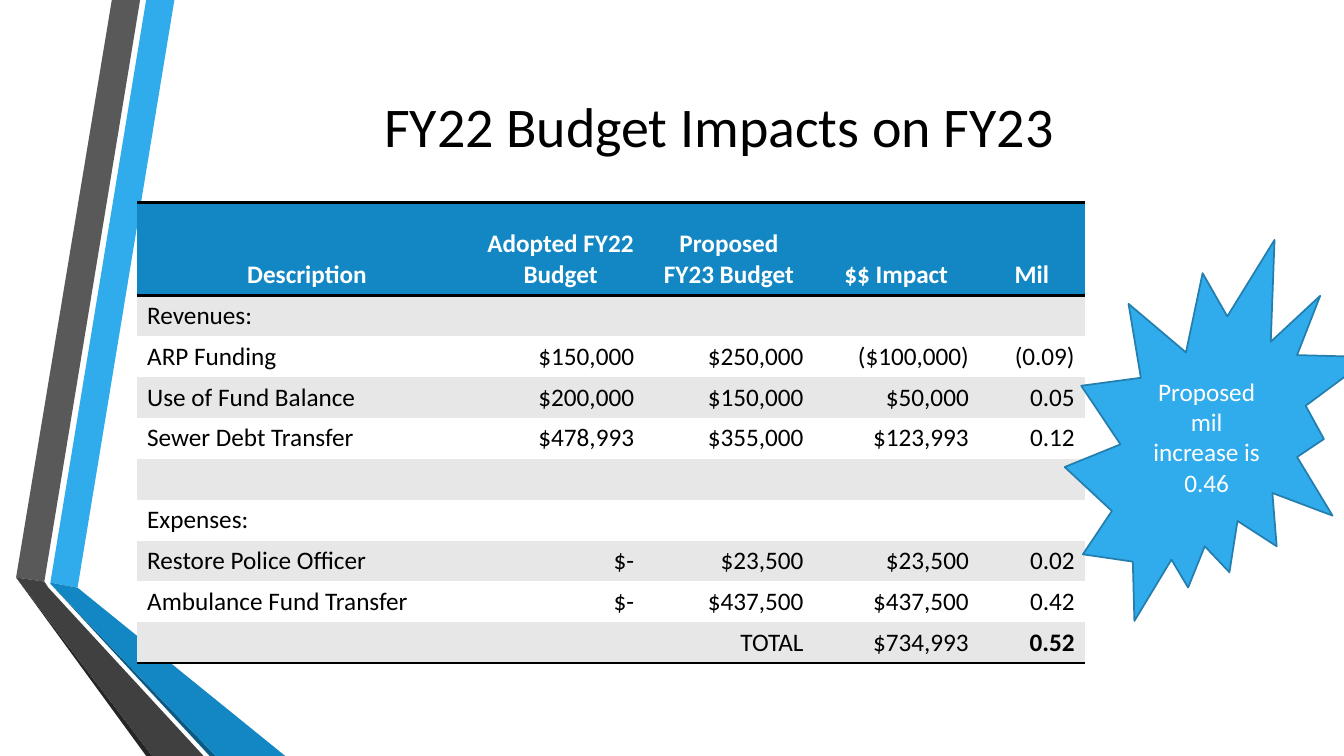
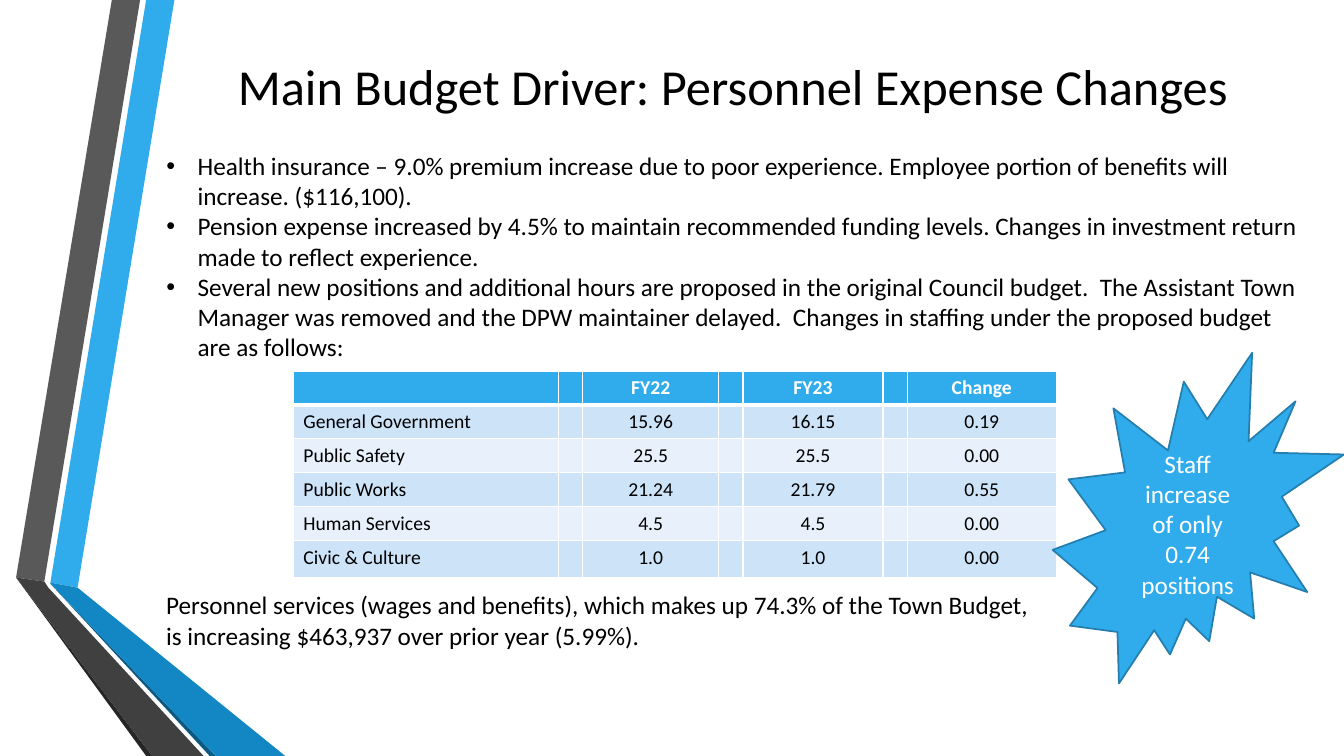
from lxml import etree
from pptx import Presentation
from pptx.dml.color import RGBColor
from pptx.enum.shapes import MSO_SHAPE
from pptx.enum.text import MSO_ANCHOR, MSO_AUTO_SIZE, PP_ALIGN
from pptx.oxml.ns import qn
from pptx.util import Inches, Pt

SEAL = MSO_SHAPE.EXPLOSION2
TOP, MIDDLE, BOTTOM = MSO_ANCHOR.TOP, MSO_ANCHOR.MIDDLE, MSO_ANCHOR.BOTTOM
LEFT, CENTER, RIGHT = PP_ALIGN.LEFT, PP_ALIGN.CENTER, PP_ALIGN.RIGHT
NO_FIT = MSO_AUTO_SIZE.NONE

# Shared look
FONT = "Calibri"
BLACK = RGBColor(0x00, 0x00, 0x00)
WHITE = RGBColor(0xFF, 0xFF, 0xFF)
SKY = RGBColor(0x30, 0xAC, 0xEC)
BLUE = RGBColor(0x12, 0x87, 0xC3)
NAVY = RGBColor(0x0C, 0x5A, 0x82)
SEAL_EDGE = RGBColor(0x24, 0x7F, 0xAF)
GRAY = RGBColor(0x59, 0x59, 0x59)
CHARCOAL = RGBColor(0x40, 0x40, 0x40)
INK = RGBColor(0x26, 0x26, 0x26)
STRIPE = RGBColor(0xE7, 0xE7, 0xE7)
PALE = RGBColor(0xCD, 0xE3, 0xF8)
PALEST = RGBColor(0xE8, 0xF1, 0xFB)
NO_STYLE = "{2D5ABB26-0587-4C30-8999-92F81FD0307C}"
SIDES = ("L", "R", "T", "B")

RIBBONS = [
    (SKY, [(0.5, 5.78), (0.77, 5.83), (1.73, 0), (1.45, 0)]),
    (GRAY, [(1.39, 0), (1.11, 0), (0.16, 5.73), (0.44, 5.77)]),
    (INK, [(0.16, 5.73), (1.45, 7.5), (1.51, 7.5)]),
    (NAVY, [(0.5, 5.79), (2.08, 7.5), (2.14, 7.5)]),
    (BLUE, [(0.5, 5.79), (2.14, 7.5), (2.83, 7.5), (0.77, 5.83), (0.5, 5.78)]),
    (CHARCOAL, [(2.02, 7.5), (0.48, 5.83), (0.44, 5.77), (0.16, 5.73), (1.51, 7.5)]),
]

# Content
IMPACT_TITLE = "FY22 Budget Impacts on FY23"
IMPACT_ROWS = [
    ("Description", "Adopted FY22 Budget", "Proposed FY23 Budget", "$$ Impact", "Mil"),
    ("Revenues:", "", "", "", ""),
    ("ARP Funding", "$150,000", "$250,000", "($100,000)", "(0.09)"),
    ("Use of Fund Balance", "$200,000", "$150,000", "$50,000", "0.05"),
    ("Sewer Debt Transfer", "$478,993", "$355,000", "$123,993", "0.12"),
    ("", "", "", "", ""),
    ("Expenses:", "", "", "", ""),
    ("Restore Police Officer", "$-", "$23,500", "$23,500", "0.02"),
    ("Ambulance Fund Transfer", "$-", "$437,500", "$437,500", "0.42"),
    ("", "", "TOTAL", "$734,993", "0.52"),
]
IMPACT_SEAL = "Proposed mil increase is 0.46"

STAFF_TITLE = "Main Budget Driver: Personnel Expense Changes"
STAFF_POINTS = [
    "Health insurance – 9.0% premium increase due to poor experience. "
    "Employee portion of benefits will increase. ($116,100).",
    "Pension expense increased by 4.5% to maintain recommended funding levels. "
    "Changes in investment return made to reflect experience.",
    "Several new positions and additional hours are proposed in the original Council "
    "budget.  The Assistant Town Manager was removed and the DPW maintainer delayed.  "
    "Changes in staffing under the proposed budget are as follows:",
]
STAFF_COUNTS = [
    ("", "FY22", "FY23", "Change"),
    ("General Government", "15.96", "16.15", "0.19"),
    ("Public Safety", "25.5", "25.5", "0.00"),
    ("Public Works", "21.24", "21.79", "0.55"),
    ("Human Services", "4.5", "4.5", "0.00"),
    ("Civic & Culture", "1.0", "1.0", "0.00"),
]
STAFF_NOTE = [
    "Personnel services (wages and benefits), which makes up 74.3% of the Town Budget,",
    "is increasing $463,937 over prior year (5.99%).",
]
STAFF_SEAL = "Staff increase of only 0.74 positions"


def write(frame, lines, size=18, color=BLACK, bold=False, align=LEFT, anchor=TOP,
          bullet=False):
    """Fill a text frame, one paragraph for each line."""
    frame.word_wrap = True
    frame.vertical_anchor = anchor
    for index, line in enumerate(lines):
        para = frame.paragraphs[0] if index == 0 else frame.add_paragraph()
        para.alignment = align
        para.space_before = Pt(0)
        if bullet:
            props = para._p.get_or_add_pPr()
            props.set("marL", str(Inches(0.31)))
            props.set("indent", str(-Inches(0.31)))
            etree.SubElement(props, qn("a:buChar")).set("char", "•")
        if not line:  # an empty cell still sets the row height
            etree.SubElement(para._p, qn("a:endParaRPr")).set("sz", str(size * 100))
            continue
        span = para.add_run()
        span.text = line
        span.font.name, span.font.size = FONT, Pt(size)
        span.font.bold, span.font.color.rgb = bold, color


def place(shape, left, top, width, height):
    shape.left, shape.top = Inches(left), Inches(top)
    shape.width, shape.height = Inches(width), Inches(height)


def add_ribbons(deck, page):
    """Draw the ribbons and move them to the master, behind everything."""
    tree = deck.slide_master.shapes._spTree
    for index, (color, points) in enumerate(RIBBONS):
        corners = [(Inches(x), Inches(y)) for x, y in points]
        builder = page.shapes.build_freeform(*corners[0])
        builder.add_line_segments(corners[1:], close=True)
        ribbon = builder.convert_to_shape()
        ribbon.shadow.inherit = False
        ribbon.fill.solid()
        ribbon.fill.fore_color.rgb = color
        ribbon.line.fill.background()
        tree.insert(2 + index, ribbon._element)


def add_title(page, text, box, size):
    place(page.shapes.title, *box)
    page.shapes.title.text_frame.auto_size = NO_FIT
    write(page.shapes.title.text_frame, [text], size=size, align=CENTER, anchor=MIDDLE)


def add_seal(page, text, box):
    seal = page.shapes.add_shape(SEAL, *map(Inches, box))
    seal.shadow.inherit = False
    seal.fill.solid()
    seal.fill.fore_color.rgb = SKY
    seal.line.color.rgb, seal.line.width = SEAL_EDGE, Pt(1.25)
    write(seal.text_frame, [text], color=WHITE, align=CENTER, anchor=MIDDLE)


def set_borders(cell, color, widths):
    """Draw the sides given in widths (points) and clear the others."""
    props = cell._tc.get_or_add_tcPr()
    for index, side in enumerate(SIDES):
        line = etree.Element(qn("a:ln" + side))
        if side in widths:
            line.set("w", str(Pt(widths[side])))
            fill = etree.SubElement(line, qn("a:solidFill"))
            etree.SubElement(fill, qn("a:srgbClr")).set("val", str(color))
        else:
            etree.SubElement(line, qn("a:noFill"))
        props.insert(index, line)


def add_grid(page, rows, left, top, widths, heights, head_fill, bands, size,
             value_align, head_anchor, line_color, borders, bold_cell=None):
    frame = page.shapes.add_table(len(rows), len(widths), Inches(left), Inches(top),
                                  Inches(sum(widths)), Inches(sum(heights)))
    table = frame.table
    table._tbl.tblPr.find(qn("a:tableStyleId")).text = NO_STYLE
    table.first_row = table.horz_banding = False
    for column, width in zip(table.columns, widths):
        column.width = Inches(width)
    for r, (row, height) in enumerate(zip(rows, heights)):
        table.rows[r].height = Inches(height)
        head = r == 0
        for c, text in enumerate(row):
            cell = table.cell(r, c)
            cell.fill.solid()
            cell.fill.fore_color.rgb = head_fill if head else bands[(r - 1) % 2]
            set_borders(cell, line_color, borders(r, len(rows) - 1))
            cell.vertical_anchor = head_anchor if head else TOP
            write(cell.text_frame, [text], size=size,
                  color=WHITE if head else BLACK,
                  bold=head or (r, c) == bold_cell,
                  align=CENTER if head else value_align if c else LEFT,
                  anchor=head_anchor if head else TOP)


def impact_borders(row, last):
    """Rules above and below the header and under the last row."""
    return {0: {"T": 2, "B": 2}, 1: {"T": 2}, last: {"B": 2}}.get(row, {})


def staff_borders(row, last):
    """Thin lines all round, a thick one under the header."""
    return {"L": 1, "R": 1, "T": 3 if row == 1 else 1, "B": 3 if row == 0 else 1}


def build_impact(page):
    add_title(page, IMPACT_TITLE, (1.65, 0.28, 10.96, 1.92), 40)
    add_grid(page, IMPACT_ROWS, 1.36, 2.01, [3.37, 1.66, 1.68, 1.64, 1.05],
             [0.92] + [0.4] * 9, BLUE, (STRIPE, WHITE), 18, RIGHT, BOTTOM,
             BLACK, impact_borders, bold_cell=(9, 4))
    add_seal(page, IMPACT_SEAL, (10.56, 2.38, 3.04, 3.78))


def build_staff(page):
    add_title(page, STAFF_TITLE, (1.75, 0.26, 11.04, 1.18), 36)
    body = page.placeholders[1]
    place(body, 1.55, 1.44, 11.44, 2.25)
    body.text_frame.auto_size = NO_FIT
    write(body.text_frame, STAFF_POINTS, bullet=True)

    # A narrow empty column stands before each value column
    rows = [[name] + [part for value in values for part in ("", value)]
            for name, *values in STAFF_COUNTS]
    add_grid(page, rows, 2.91, 3.68, [2.63, 0.23, 1.35, 0.23, 1.39, 0.23, 1.48],
             [0.33] * 5 + [0.37], SKY, (PALE, PALEST), 14, CENTER, TOP,
             WHITE, staff_borders)

    note = page.shapes.add_textbox(*map(Inches, (1.55, 5.8, 9, 0.7)))
    write(note.text_frame, STAFF_NOTE)
    add_seal(page, STAFF_SEAL, (10.44, 3.5, 2.89, 3.28))


def main():
    deck = Presentation()
    deck.slide_width, deck.slide_height = Inches(13.33), Inches(7.5)
    impact = deck.slides.add_slide(deck.slide_layouts[5])
    staff = deck.slides.add_slide(deck.slide_layouts[1])
    add_ribbons(deck, impact)
    build_impact(impact)
    build_staff(staff)
    deck.save("out.pptx")


if __name__ == "__main__":
    main()
